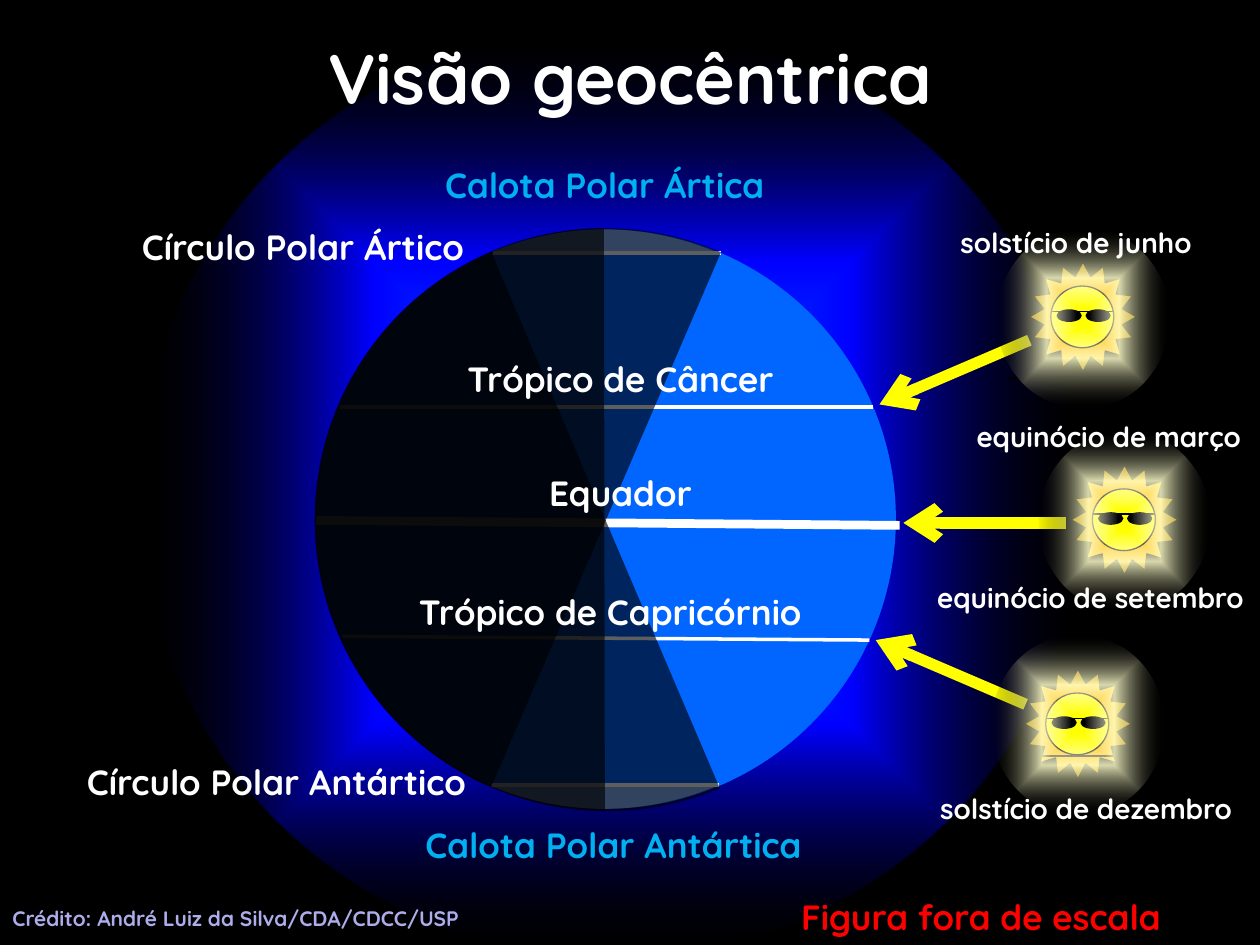
from pptx import Presentation, oxml
from pptx import util as u
from pptx.dml.color import RGBColor
from pptx.enum import shapes, text
from pptx.oxml.ns import nsdecls, qn

KIND = shapes.MSO_SHAPE


def color(code):
    return RGBColor.from_string(code)


def inches(*lengths):
    return [u.Inches(length) for length in lengths]


class Sky:
    """Holds the style and the current slide, and draws each kind of element."""

    font = "Quicksand"
    white, black, yellow = "FFFFFF", "000000", "FFFF00"

    def __init__(self, page):
        self.page = page
        self.target = page.shapes
        page.background.fill.solid()
        page.background.fill.fore_color.rgb = color(self.black)

    def set_text(self, frame, words, size, code, align):
        frame.word_wrap = True
        para = frame.paragraphs[0]
        para.text = words
        para.alignment = align
        para.font.name = self.font
        para.font.size = u.Pt(size)
        para.font.bold = True
        para.font.color.rgb = color(code)

    def title(self, words, *place):
        box = self.page.shapes.title
        box.left, box.top, box.width, box.height = inches(*place)
        box.text_frame.vertical_anchor = text.MSO_ANCHOR.MIDDLE
        self.set_text(box.text_frame, words, 40, self.white, text.PP_ALIGN.CENTER)
        box.element.getparent().append(box.element)

    def label(self, words, place, size=20, code=white, align=text.PP_ALIGN.CENTER):
        box = self.target.add_textbox(*inches(*place))
        box.text_frame.auto_size = text.MSO_AUTO_SIZE.SHAPE_TO_FIT_TEXT
        self.set_text(box.text_frame, words, size, code, align)

    def outline(self, shape, code=None, width=0.75):
        shape.shadow.inherit = False
        if code:
            shape.line.color.rgb = color(code)
            shape.line.width = u.Pt(width)
        else:
            shape.line.fill.background()

    def shape(self, kind, place, fill, line=None, opacity=100):
        shape = self.target.add_shape(kind, *inches(*place))
        shape.fill.solid()
        shape.fill.fore_color.rgb = color(fill)
        if opacity < 100:
            paint = shape.element.spPr.find(qn("a:solidFill"))[0]
            paint.append(oxml.parse_xml(f'<a:alpha {nsdecls("a")} val="{opacity * 1000}"/>'))
        self.outline(shape, line)
        return shape

    def glow(self, place, stops):
        shape = self.shape(KIND.OVAL, place, self.black)
        marks = "".join(
            f'<a:gs pos="{spot * 1000}"><a:srgbClr val="{code}">'
            f'<a:alpha val="{opacity * 1000}"/></a:srgbClr></a:gs>'
            for spot, code, opacity in stops
        )
        gradient = oxml.parse_xml(
            f'<a:gradFill {nsdecls("a")} rotWithShape="1"><a:gsLst>{marks}</a:gsLst>'
            '<a:path path="shape"><a:fillToRect l="50000" t="50000" r="50000" b="50000"/>'
            "</a:path></a:gradFill>"
        )
        solid = shape.element.spPr.find(qn("a:solidFill"))
        solid.getparent().replace(solid, gradient)

    def chord(self, place, angles, fill, opacity, turn=0, flip=False):
        shape = self.shape(KIND.CHORD, place, fill, opacity=opacity)
        for index, angle in enumerate(angles):
            shape.adjustments[index] = angle * 0.6
        shape.rotation = turn
        if flip:
            shape.element.spPr.find(qn("a:xfrm")).set("flipH", "1")

    def line(self, start, end, code=white, width=2.0, arrow=False):
        line = self.target.add_connector(
            shapes.MSO_CONNECTOR.STRAIGHT, *inches(*start, *end)
        )
        line.line.color.rgb = color(code)
        line.line.width = u.Pt(width)
        properties = line.element.spPr
        if arrow:
            tail = oxml.parse_xml(f'<a:tailEnd {nsdecls("a")} type="arrow"/>')
            properties.find(qn("a:ln")).append(tail)
        properties.append(oxml.parse_xml(f'<a:effectLst {nsdecls("a")}/>'))

    def smile(self, left, top):
        controls = [(0, 0.03), (0.07, 0.04), (0.15, 0.03), (0.2, 0)]
        points = []
        for step in range(11):
            t = step / 10
            weights = [(1 - t) ** 3, 3 * t * (1 - t) ** 2, 3 * t * t * (1 - t), t**3]
            x = sum(w * c[0] for w, c in zip(weights, controls))
            y = sum(w * c[1] for w, c in zip(weights, controls))
            points.append((left + x, top + y))
        builder = self.target.build_freeform(*points[0], scale=u.Inches(1))
        builder.add_line_segments(points[1:], close=False)
        mouth = builder.convert_to_shape()
        mouth.fill.background()
        self.outline(mouth, self.black)

    def sun(self, left, top):
        self.target = self.page.shapes.add_group_shape().shapes
        star = self.shape(
            KIND.STAR_16_POINT, (left + 0.26, top + 0.27, 0.85, 0.87), "FFC000", self.black
        )
        star.adjustments[0] = 0.375
        self.shape(KIND.OVAL, (left + 0.43, top + 0.46, 0.5, 0.49), self.yellow, self.black)
        self.smile(left + 0.58, top + 0.81)
        for lens in (0.48, 0.71):
            self.shape(KIND.OVAL, (left + lens, top + 0.65, 0.19, 0.09), self.black, self.black)
        self.line((left + 0.43, top + 0.66), (left + 0.93, top + 0.66), self.black, 0.75)
        self.glow(
            (left, top, 1.37, 1.43),
            [(7, self.white, 0), (42, "FFFFCC", 85), (100, self.black, 2)],
        )
        self.target = self.page.shapes


def main():
    deck = Presentation()
    deck.slide_width, deck.slide_height = inches(10, 7.5)
    sky = Sky(deck.slides.add_slide(deck.slide_layouts[5]))

    sky.glow((1.11, 0.22, 7.5, 7.39),
             [(0, "0066FF", 100), (50, "0000FF", 100), (100, sky.black, 5)])
    sky.shape(KIND.OVAL, (2.51, 1.82, 4.6, 4.6), "0066FF").rotation = 47.7
    sky.line((2.51, 4.13), (7.14, 4.17), width=5)
    for start, end in [((2.7, 3.23), (6.93, 3.23)), ((2.72, 5.05), (6.9, 5.08)),
                       ((3.91, 2.01), (5.72, 2.01)), ((3.9, 6.23), (5.71, 6.23))]:
        sky.line(start, end)

    sky.label("Círculo Polar Ártico", (0.12, 1.74, 4.57, 0.44))
    sky.label("Círculo Polar Antártico", (-0.09, 5.99, 4.57, 0.44))
    for turn, angle in [(0, 67.06), (180, 67.43)]:
        sky.chord((2.49, 1.82, 4.6, 4.6), (angle, 112.97), sky.white, 53, turn)
    sky.label("Calota Polar Antártica", (3.1, 6.49, 3.54, 0.44), code="00B0F0")
    sky.label("Calota Polar Ártica", (3.03, 1.25, 3.54, 0.44), code="00B0F0")

    for start, end in [((8.46, 4.15), (7.17, 4.15)), ((8.17, 2.7), (6.98, 3.21)),
                       ((8.14, 5.59), (6.95, 5.08))]:
        sky.line(start, end, sky.yellow, 6.5, arrow=True)
    for left, top in [(7.91, 1.81), (8.24, 3.42), (7.87, 5.04)]:
        sky.sun(left, top)
    for left, top, turn, angle in [(2.5, 1.81, 180, 90.15), (2.51, 1.82, 157, 90.15),
                                   (2.5, 1.81, 203, 89.46)]:
        sky.chord((left, top, 4.6, 4.62), (angle, 270.03), sky.black, 63, turn, flip=True)

    sky.label("Trópico de Câncer", (2.64, 2.79, 4.57, 0.44))
    sky.label("Trópico de Capricórnio", (2.56, 4.64, 4.57, 0.44))
    sky.label("Equador", (2.64, 3.69, 4.57, 0.44))
    sky.title("Visão geocêntrica", 0, -0.02, 10, 1.25)
    sky.label("Figura fora de escala", (6.26, 7.06, 3.54, 0.44), code="FF0000",
              align=text.PP_ALIGN.LEFT)
    for words, place in [("solstício de junho", (7.2, 1.74, 2.68, 0.37)),
                         ("solstício de dezembro", (7.28, 6.23, 2.68, 0.37)),
                         ("equinócio de março", (7.56, 3.28, 2.48, 0.37)),
                         ("equinócio de setembro", (7.27, 4.56, 2.77, 0.37))]:
        sky.label(words, place, 16)
    sky.label("Crédito: André Luiz da Silva/CDA/CDCC/USP", (0, 7.14, 10.28, 0.3), 12,
              "ADADEB", text.PP_ALIGN.LEFT)
    deck.save("out.pptx")


if __name__ == "__main__":
    main()
